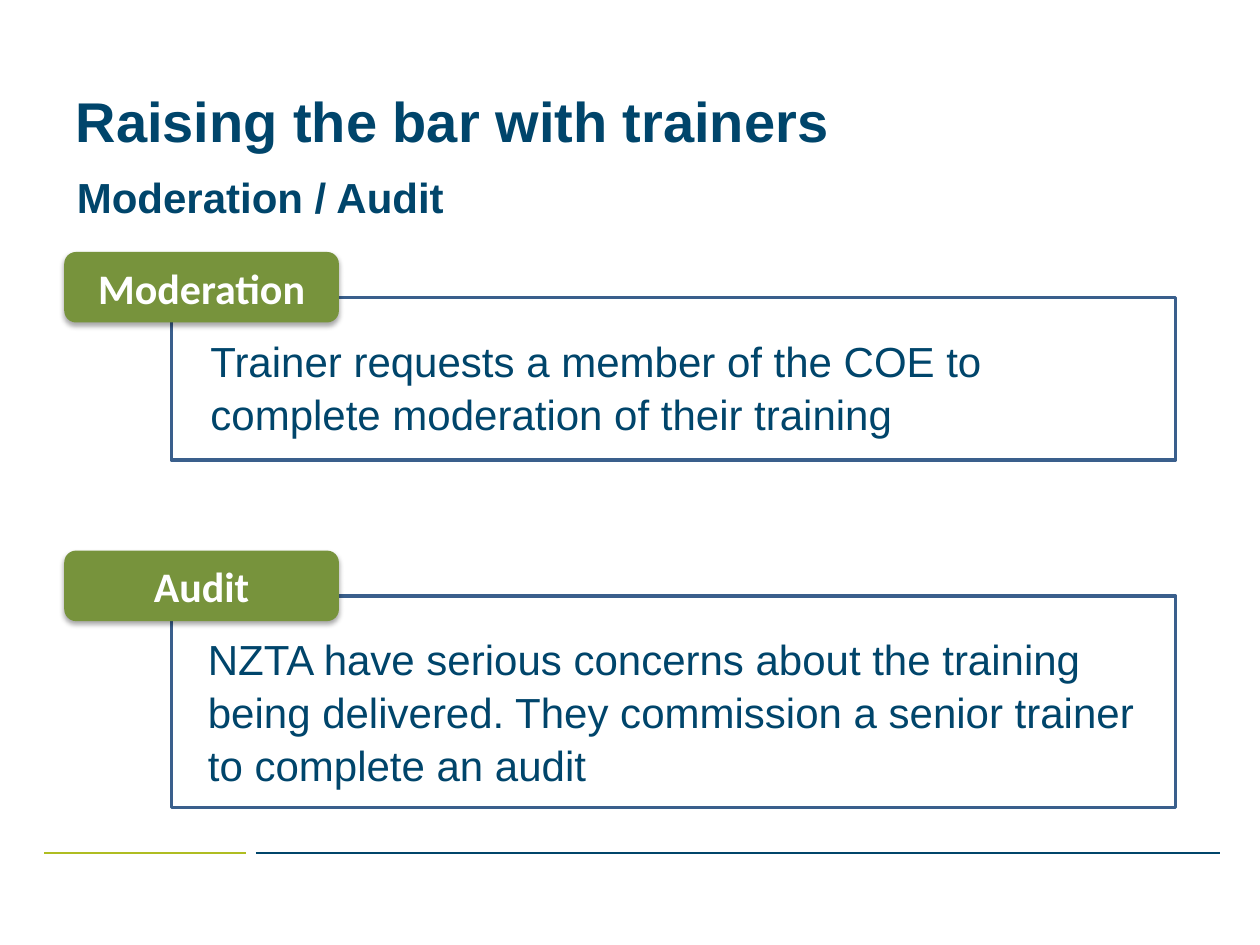
from dataclasses import dataclass

from lxml import etree
from pptx import Presentation
from pptx import util as u
from pptx.dml.color import RGBColor
from pptx.enum import shapes, text
from pptx.oxml import ns


@dataclass(frozen=True)
class Theme:
    navy: str = "00456B"
    rule_navy: str = "00456A"
    lime: str = "AFBD21"
    green: str = "77933C"
    outline: str = "3A5F8C"
    white: str = "FFFFFF"
    shadow: str = "000000"
    title_size: int = 32
    text_size: int = 24
    text_font: str = "Arial"
    label_font: str = "Calibri"


theme = Theme()


def place(shape, left, top, width, height):
    shape.left, shape.top = u.Inches(left), u.Inches(top)
    shape.width, shape.height = u.Inches(width), u.Inches(height)


def write(shape, wording, size, color, font, bold, anchor, align, indent=0.0, spacing=1.0):
    frame = shape.text_frame
    frame.word_wrap = True
    frame.auto_size = text.MSO_AUTO_SIZE.NONE
    frame.vertical_anchor = anchor
    paragraph = frame.paragraphs[0]
    properties = paragraph._p.get_or_add_pPr()
    properties.set("marL", str(u.Inches(indent)))
    properties.set("indent", "0")
    etree.SubElement(properties, ns.qn("a:buNone"))
    paragraph.alignment = align
    paragraph.line_spacing = spacing
    paragraph.space_before = u.Pt(0)
    run = paragraph.add_run()
    run.text = wording
    run.font.name, run.font.size, run.font.bold = font, u.Pt(size), bold
    run.font.color.rgb = RGBColor.from_string(color)


presentation = Presentation()
presentation.slide_width, presentation.slide_height = u.Inches(10), u.Inches(7.5)
slide = presentation.slides.add_slide(presentation.slide_layouts.get_by_name("Comparison"))
holders = {holder.placeholder_format.idx: holder for holder in slide.placeholders}
LEFT, CENTER = text.PP_ALIGN.LEFT, text.PP_ALIGN.CENTER
TOP, MIDDLE = text.MSO_ANCHOR.TOP, text.MSO_ANCHOR.MIDDLE

# Unused placeholders
for index in (3, 10, 11, 12):
    if index in holders:
        element = holders[index].element
        element.getparent().remove(element)

# Footer rules
for start, end, color in ((0.35, 1.95, theme.lime), (2.03, 9.68, theme.rule_navy)):
    rule = slide.shapes.add_connector(
        shapes.MSO_CONNECTOR.STRAIGHT,
        u.Inches(start), u.Inches(6.77), u.Inches(end), u.Inches(6.77))
    rule.line.color.rgb = RGBColor.from_string(color)
    rule.line.width = u.Pt(0.75)
    etree.SubElement(rule.element.spPr, ns.qn("a:effectLst"))

# Title and subtitle
place(slide.shapes.title, 0.5, 0.6, 9, 0.71)
write(slide.shapes.title, "Raising the bar with trainers", theme.title_size,
      theme.navy, theme.text_font, True, MIDDLE, LEFT)
place(holders[1], 0.51, 1.31, 8.98, 0.47)
write(holders[1], "Moderation / Audit", theme.text_size,
      theme.navy, theme.text_font, True, TOP, LEFT)

# Sections: label, label top, frame height, body placeholder, body left and width, wording
sections = (
    ("Moderation", 2.0, 1.29, holders[2], 1.47, 7.66,
     "Trainer requests a member of the COE to complete moderation of their training"),
    ("Audit", 4.37, 1.68, holders[4], 1.45, 7.72,
     "NZTA have serious concerns about the training being delivered. "
     "They commission a senior trainer to complete an audit"),
)
for label, top, height, body, body_left, body_width, wording in sections:
    # Outlined frame
    frame_box = slide.shapes.add_shape(
        shapes.MSO_SHAPE.RECTANGLE,
        u.Inches(1.36), u.Inches(top + 0.36), u.Inches(7.97), u.Inches(height))
    frame_box.shadow.inherit = False
    frame_box.fill.background()
    frame_box.line.color.rgb = RGBColor.from_string(theme.outline)
    frame_box.line.width = u.Pt(2)

    # Body text
    place(body, body_left, top + 0.59, body_width, height - 0.28)
    write(body, wording, theme.text_size, theme.navy, theme.text_font,
          False, TOP, LEFT, indent=0.1, spacing=1.05)

    # Label with a soft shadow
    tab = slide.shapes.add_shape(
        shapes.MSO_SHAPE.ROUNDED_RECTANGLE,
        u.Inches(0.51), u.Inches(top), u.Inches(2.18), u.Inches(0.56))
    tab.shadow.inherit = False
    tab.fill.solid()
    tab.fill.fore_color.rgb = RGBColor.from_string(theme.green)
    tab.line.fill.background()
    effects = tab.element.spPr.find(ns.qn("a:effectLst"))
    shadow = etree.SubElement(effects, ns.qn("a:outerShdw"), blurRad=str(u.Pt(3.1)),
                              dist=str(u.Pt(1.8)), dir="5400000", rotWithShape="0")
    shade = etree.SubElement(shadow, ns.qn("a:srgbClr"), val=theme.shadow)
    etree.SubElement(shade, ns.qn("a:alpha"), val="35000")
    write(tab, label, theme.text_size, theme.white, theme.label_font, True, MIDDLE, CENTER)

presentation.save("out.pptx")
